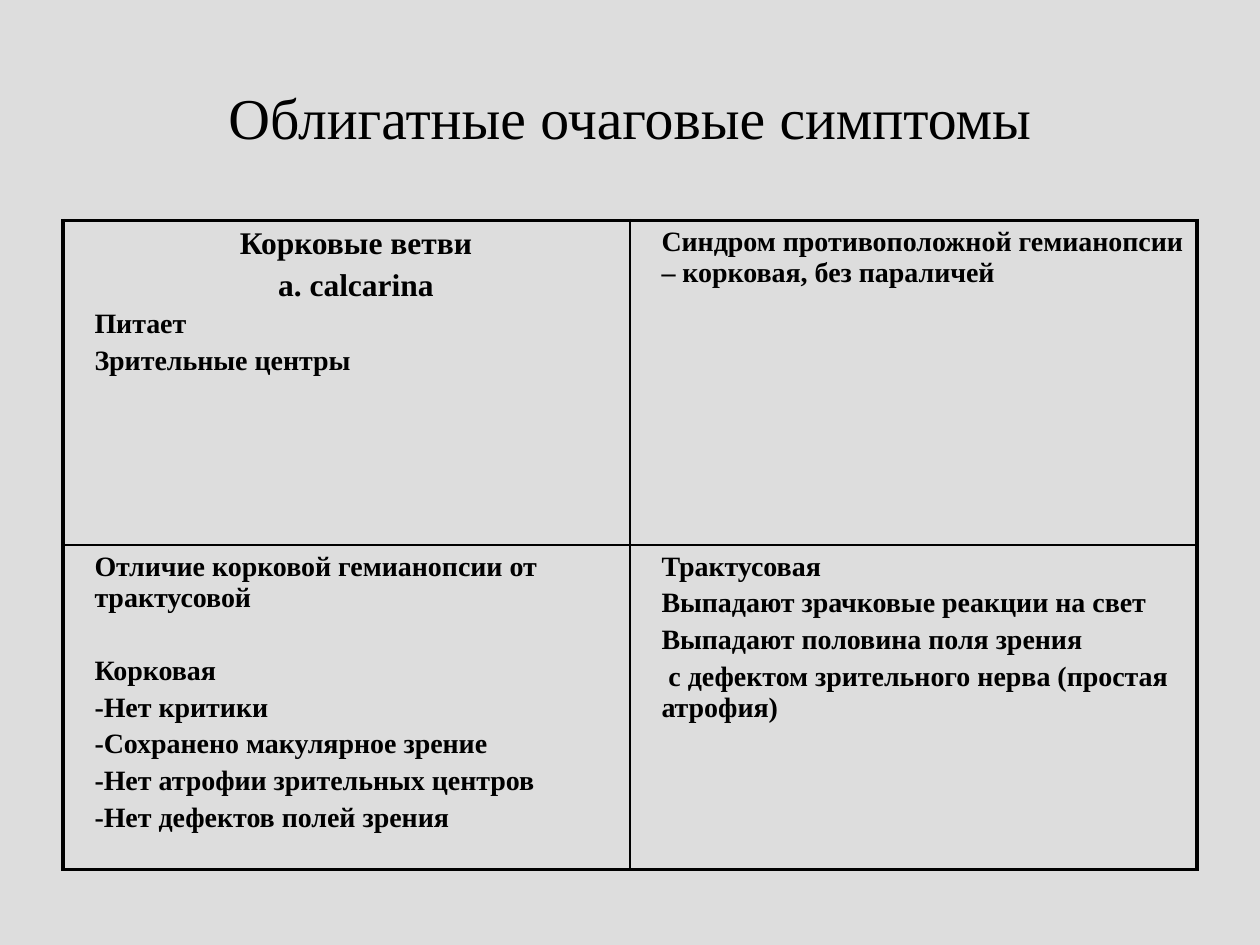
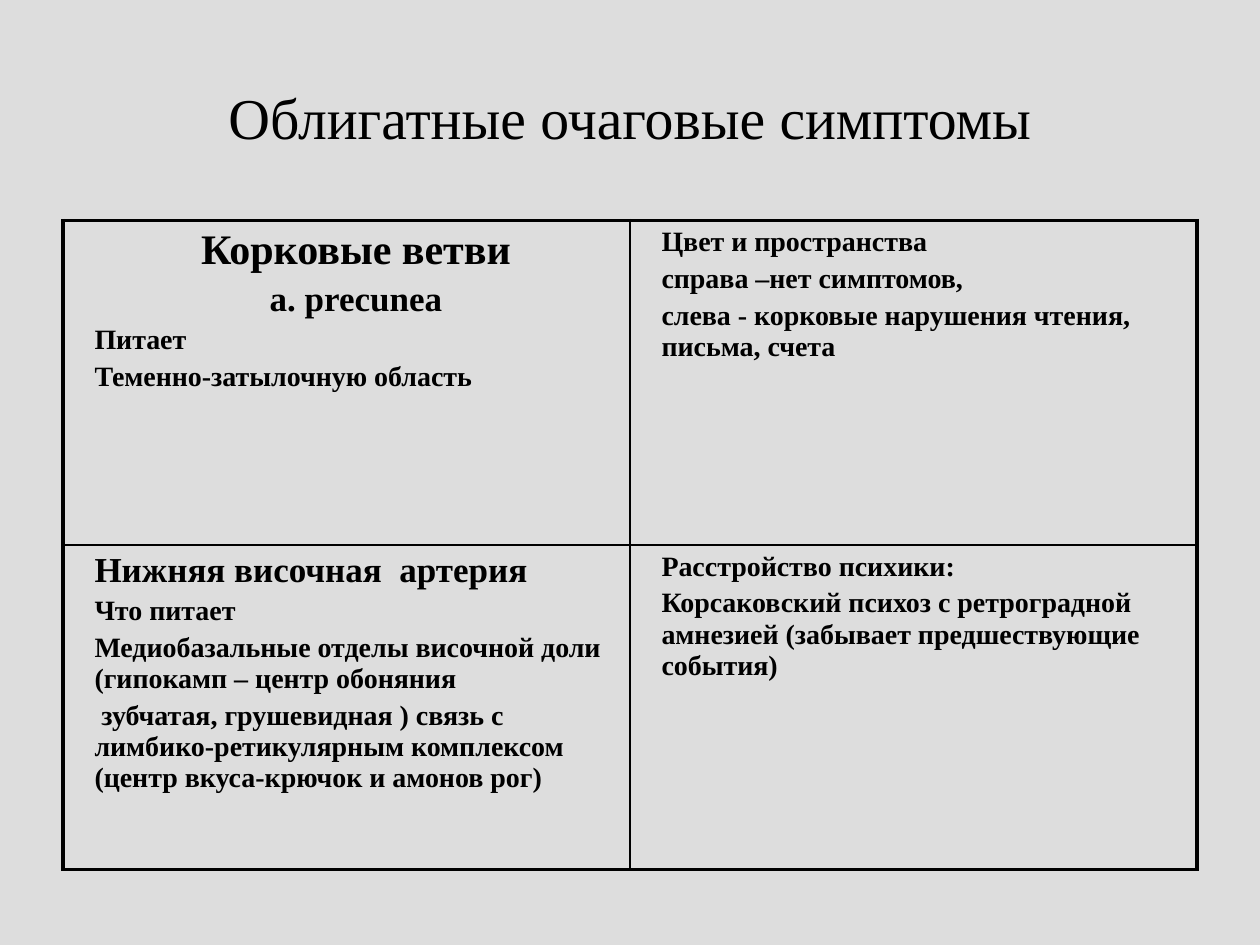
from itertools import product

from lxml.etree import SubElement
from pptx import Presentation
from pptx.dml.color import RGBColor
from pptx.enum.text import MSO_ANCHOR, PP_ALIGN
from pptx.oxml.ns import qn
from pptx.util import Inches, Pt

THEME = {
    "background": RGBColor.from_string("DDDDDD"),
    "ink": RGBColor.from_string("000000"),
    "font": "Times New Roman",
    "title": 33,
    "large": 24,
    "medium": 20,
    "heading": 18,
    "body": 16,
    "outer_border": 2.25,
    "inner_border": 1,
}
TITLE_BOX = [Inches(v) for v in (0.5, 0.3, 9, 1.25)]
TABLE_BOX = [Inches(v) for v in (0.5, 1.75, 9, 5.15)]
TEXT_INDENT = Inches(0.15)
SPACING = 0.2
SECTION_GAP = 24

TITLE = "Облигатные очаговые симптомы"

# Each cell lists its paragraphs: plain body text, or (text, options).
TABLES = [
    [
        [
            [("Корковые ветви", {"size": "heading", "center": True}),
             ("a. calcarina", {"size": "heading", "center": True}),
             "Питает",
             "Зрительные центры"],
            ["Синдром противоположной гемианопсии – корковая, без параличей"],
        ],
        [
            ["Отличие корковой гемианопсии от трактусовой",
             ("Корковая", {"gap": SECTION_GAP}),
             "-Нет критики",
             "-Сохранено макулярное зрение",
             "-Нет атрофии зрительных центров",
             "-Нет дефектов полей зрения"],
            ["Трактусовая",
             "Выпадают зрачковые реакции на свет",
             "Выпадают половина поля зрения",
             " с дефектом зрительного нерва (простая атрофия)"],
        ],
    ],
    [
        [
            [("Корковые ветви", {"size": "large", "center": True}),
             ("a. precunea", {"size": "medium", "center": True}),
             "Питает",
             "Теменно-затылочную область"],
            ["Цвет и пространства",
             "справа –нет симптомов,",
             "слева - корковые нарушения чтения, письма, счета"],
        ],
        [
            [("Нижняя височная  артерия", {"size": "medium"}),
             "Что питает",
             "Медиобазальные отделы височной доли (гипокамп – центр обоняния",
             " зубчатая, грушевидная ) связь с лимбико-ретикулярным комплексом "
             "(центр вкуса-крючок и амонов рог)"],
            ["Расстройство психики:",
             "Корсаковский психоз с ретроградной амнезией "
             "(забывает предшествующие события)"],
        ],
    ],
]


def place(sp, box):
    for name, value in zip(("left", "top", "width", "height"), box):
        setattr(sp, name, value)


def write(p, text, size, bold):
    r = p.add_run()
    r.text = text
    style = {"name": THEME["font"], "size": Pt(THEME[size]), "bold": bold}
    for name, value in style.items():
        setattr(r.font, name, value)
    r.font.color.rgb = THEME["ink"]


def add_title(slide):
    sp = slide.shapes.title
    place(sp, TITLE_BOX)
    tf = sp.text_frame
    tf.vertical_anchor = MSO_ANCHOR.MIDDLE
    p = tf.paragraphs[0]
    p.alignment = PP_ALIGN.CENTER
    write(p, TITLE, "title", False)


def fill_cell(cell, paragraphs):
    tf = cell.text_frame
    for i, item in enumerate(paragraphs):
        text, options = (item, {}) if isinstance(item, str) else item
        size = options.get("size", "body")
        gap = options.get("gap", SPACING * THEME[size]) if i else 0
        p = tf.paragraphs[0] if i == 0 else tf.add_paragraph()
        p.alignment = PP_ALIGN.CENTER if options.get("center") else PP_ALIGN.LEFT
        p.space_before = Pt(gap)
        pPr = p._p.get_or_add_pPr()
        pPr.set("marL", str(TEXT_INDENT))
        pPr.set("indent", "0")
        write(p, text, size, True)


def set_borders(cell, on_edge):
    """Draw the four cell lines, heavier on the edges of the table."""
    tcPr = cell._tc.get_or_add_tcPr()
    for i, (side, outer) in enumerate(on_edge.items()):
        width = Pt(THEME["outer_border" if outer else "inner_border"])
        ln = SubElement(tcPr, qn(f"a:ln{side}"), w=str(width))
        fill = SubElement(ln, qn("a:solidFill"))
        SubElement(fill, qn("a:srgbClr"), val=str(THEME["ink"]))
        tcPr.insert(i, ln)


def add_symptom_table(slide, rows):
    n_rows, n_cols = len(rows), len(rows[0])
    table = slide.shapes.add_table(n_rows, n_cols, *TABLE_BOX).table
    table.first_row = table.horz_banding = False
    for r, c in product(range(n_rows), range(n_cols)):
        cell = table.cell(r, c)
        cell.fill.background()
        fill_cell(cell, rows[r][c])
        set_borders(cell, {"L": c == 0, "R": c == n_cols - 1,
                           "T": r == 0, "B": r == n_rows - 1})


def main():
    prs = Presentation()
    prs.slide_width, prs.slide_height = Inches(10), Inches(7.5)
    fill = prs.slide_master.background.fill
    fill.solid()
    fill.fore_color.rgb = THEME["background"]
    title_only = prs.slide_layouts.get_by_name("Title Only")
    for rows in TABLES:
        slide = prs.slides.add_slide(title_only)
        add_title(slide)
        add_symptom_table(slide, rows)
    prs.save("out.pptx")


if __name__ == "__main__":
    main()
